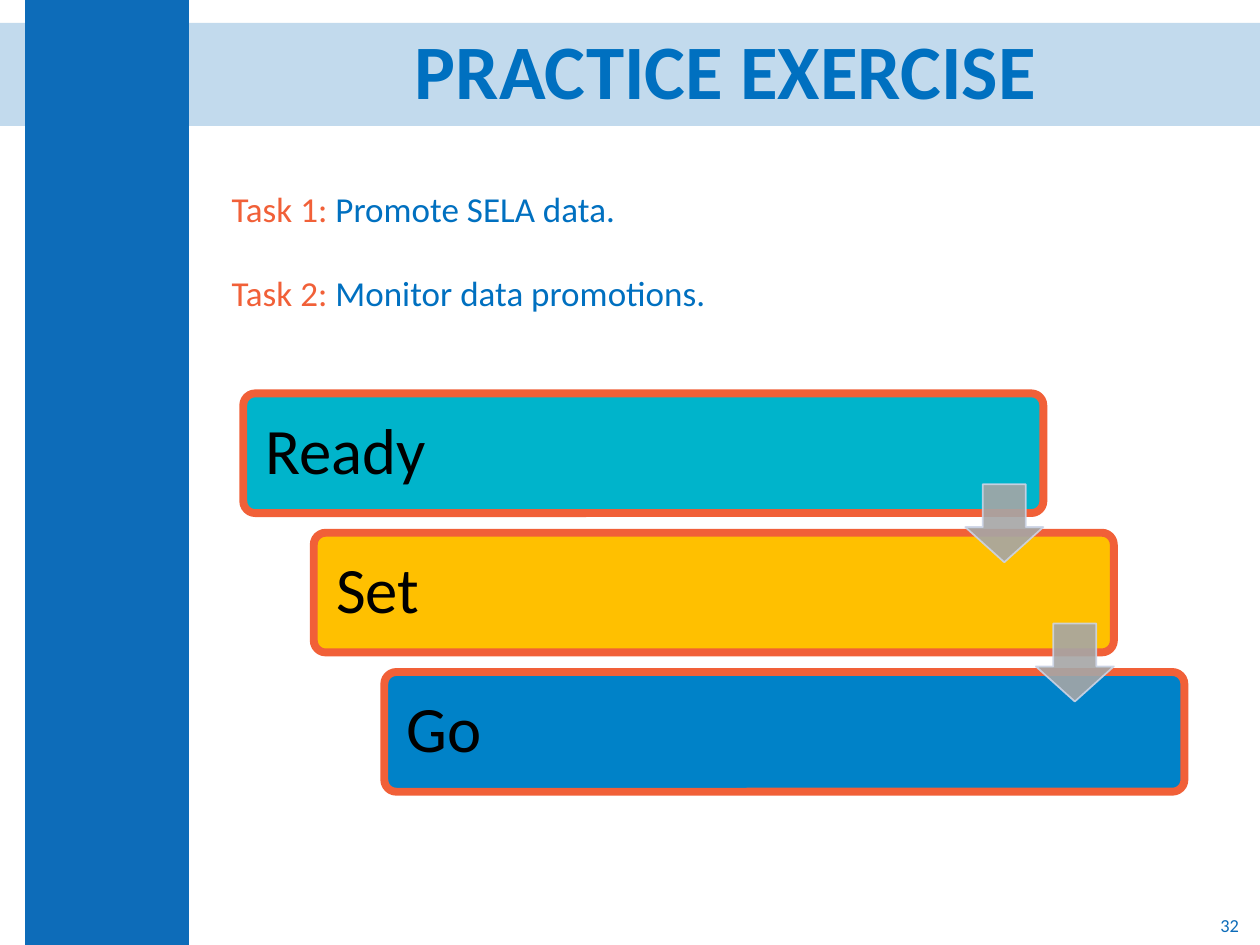
from lxml.etree import SubElement
from pptx import Presentation
from pptx.dml.color import RGBColor
from pptx.enum.shapes import MSO_SHAPE as SHAPE
from pptx.enum.text import MSO_ANCHOR as ANCHOR, PP_ALIGN as ALIGN
from pptx.oxml.ns import qn
from pptx.util import Pt

COLORS = {
    "brand": "0D6CB9", "blue": "0070C0", "orange": "F16038", "black": "000000",
    "teal": "00B4CB", "amber": "FFC000", "azure": "0082C8",
    "gray": "A6A6A6", "pale": "CCD4E6",
}
TASKS = [("Task 1:", " Promote SELA data."), ("Task 2:", " Monitor data promotions.")]
STEPS = [("Ready", "teal"), ("Set", "amber"), ("Go", "azure")]


def rgb(name):
    """Return the named colour."""
    return RGBColor.from_string(COLORS[name])


def set_alpha(fill, percent):
    """Make a solid fill partly transparent."""
    clr = fill._xPr.find(qn("a:solidFill"))[0]
    SubElement(clr, qn("a:alpha"), val=str(percent * 1000))


def add_block(s, kind, box, color, alpha=100, line=None, width=1):
    """Add a filled preset shape."""
    sp = s.shapes.add_shape(kind, *map(Pt, box))
    sp.shadow.inherit = False
    sp.fill.solid()
    sp.fill.fore_color.rgb = rgb(color)
    if line:
        sp.line.color.rgb = rgb(line)
        sp.line.width = Pt(width)
    else:
        sp.line.fill.background()
    if alpha < 100:
        set_alpha(sp.fill, alpha)
        if line:
            set_alpha(sp.line.fill, alpha)
    return sp


def style(run, size, color, bold=False):
    """Format a run."""
    run.font.name = "Calibri"
    run.font.size = Pt(size)
    run.font.bold = bold
    run.font.color.rgb = rgb(color)


def add_label(s, box, text, size, color, align, bold=False):
    """Add a one-line text box centred vertically."""
    tf = s.shapes.add_textbox(*map(Pt, box)).text_frame
    tf.word_wrap = True
    tf.vertical_anchor = ANCHOR.MIDDLE
    p = tf.paragraphs[0]
    p.text = text
    p.alignment = align
    p.line_spacing = 0.9
    style(p.runs[0], size, color, bold)


def add_frame(s, width, height):
    """Add the header band, side column, title and slide number."""
    add_block(s, SHAPE.RECTANGLE, (0, 13, width, 59), "brand", 25)
    add_block(s, SHAPE.RECTANGLE, (14.4, 0, 93.6, height), "brand")
    add_label(s, (130.3, 13, 568.8, 59), "PRACTICE EXERCISE", 44, "blue", ALIGN.CENTER, True)
    add_label(s, (width - 167, height - 21.6, 162, 21.6), "32", 10.5, "brand", ALIGN.RIGHT)


def add_tasks(s, box):
    """Add the list of tasks."""
    tf = s.shapes.add_textbox(*map(Pt, box)).text_frame
    tf.word_wrap = True
    for i, (name, detail) in enumerate(TASKS):
        p = tf.add_paragraph() if i else tf.paragraphs[0]
        if i:
            p.space_before = Pt(24)
        for text, color in ((name, "orange"), (detail, "blue")):
            r = p.add_run()
            r.text = text
            style(r, 20, color)


def add_steps(s, box):
    """Add the staircase of cards, then the arrows between them."""
    x, y, w, h = box
    card_w, card_h, arrow = 457.2, 68.4, 44.6
    dx = (w - card_w) / (len(STEPS) - 1)
    dy = (h - card_h) / (len(STEPS) - 1)
    for i, (text, color) in enumerate(STEPS):
        card = (x + i * dx, y + i * dy, card_w, card_h)
        sp = add_block(s, SHAPE.ROUNDED_RECTANGLE, card, color, line="orange", width=4.5)
        sp.adjustments[0] = 0.1
        tf = sp.text_frame
        tf.margin_left = tf.margin_right = Pt(10.8)
        tf.vertical_anchor = ANCHOR.MIDDLE
        p = tf.paragraphs[0]
        p.text = text
        p.alignment = ALIGN.LEFT
        p.line_spacing = 0.9
        style(p.runs[0], 37, color="black")
    for i in range(len(STEPS) - 1):
        spot = (x + i * dx + card_w - arrow, y + i * dy + 51.9, arrow, arrow)
        sp = add_block(s, SHAPE.DOWN_ARROW, spot, "gray", 90, "pale")
        sp.adjustments[0] = 0.55
        sp.adjustments[1] = 0.45


def main():
    """Build and save the slide."""
    prs = Presentation()
    prs.slide_width, prs.slide_height = Pt(720), Pt(540)
    s = prs.slides.add_slide(prs.slide_layouts[6])
    add_frame(s, 720, 540)
    add_steps(s, (139, 224.8, 537.8, 227.6))
    add_tasks(s, (125.3, 103.7, 578.2, 89.3))
    prs.save("out.pptx")


if __name__ == "__main__":
    main()
